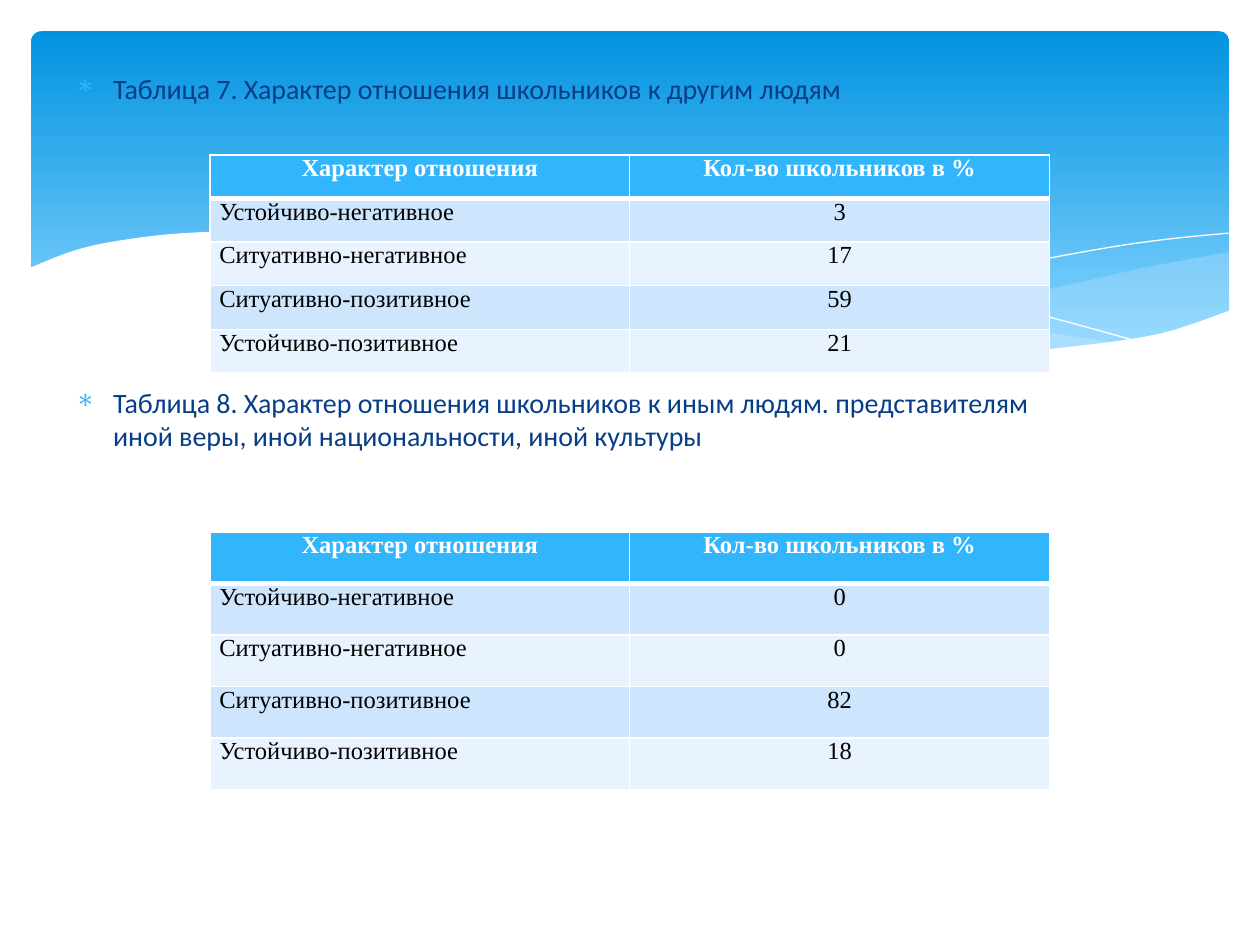
"""Build a slide with two captioned tables over a waved banner."""
from dataclasses import dataclass

from lxml.etree import SubElement as Sub, Element as Elem
from pptx import Presentation as Deck
from pptx.dml.color import RGBColor as Rgb
from pptx.enum.shapes import MSO_SHAPE as Kind
from pptx.enum.text import MSO_ANCHOR as Anchor, PP_ALIGN as Align
from pptx.oxml.ns import qn
from pptx.util import Cm, Pt


@dataclass(frozen=True)
class Theme:
    deep: str = "0293E0"
    sky: str = "83D3FE"
    mist: str = "C6E7FC"
    white: str = "FFFFFF"
    black: str = "000000"
    navy: str = "073E87"
    head: str = "31B6FD"
    bands: tuple = ("CEE5FE", "E8F3FF")
    sans: str = "Calibri"
    serif: str = "Times New Roman"
    title: int = 16
    cell: int = 14
    thin: int = 1
    thick: int = 3


THEME = Theme()

CREST = [(24.82, 6.25), (23.37, 6.73), (21.59, 6.99), (20.55, 7.04),
         (18.44, 6.91), (15.9, 6.55), (13.44, 6.07), (11.35, 5.59),
         (9.27, 5.13), (7.42, 4.83), (5.36, 4.67), (3.71, 4.7),
         (2.41, 4.85), (1.5, 5.05), (0.58, 5.41)]
BASE = [(0.58, 8.36), (24.82, 8.36)]
RIGHT_TOP = [(24.79, 5.08), (23.01, 5.41), (21.13, 5.84), (19.13, 6.3),
             (16.79, 6.73)]
RIGHT_LOW = [(16.79, 6.73), (18.59, 6.96), (20.4, 7.06), (22.15, 6.96),
             (23.57, 6.68), (24.79, 6.27)]
LEFT_TOP = [(22.68, 6.93), (20.5, 6.6), (17.93, 6.1), (15.98, 5.64),
            (13.74, 5.16), (11.81, 4.85), (9.65, 4.7), (7.26, 4.85)]
LEFT_LOW = [(7.26, 4.85), (9.19, 5.16), (11.4, 5.64), (14.38, 6.3),
            (16.89, 6.76), (19, 7.01), (20.78, 7.06), (22.68, 6.93)]
LONG_LINE = [(7.85, 4.95), (9.22, 4.8), (11, 4.75), (13.54, 4.93),
             (16.15, 5.28), (19.3, 5.92), (21.11, 6.38), (23.04, 6.91)]
SHORT_LINE = [(15.57, 6.53), (17.65, 5.97), (19.71, 5.49), (22, 5.05),
              (23.47, 4.83), (24.77, 4.7)]

HEADS = ("Характер отношения", "Кол-во школьников в %")
LABELS = ("Устойчиво-негативное", "Ситуативно-негативное",
          "Ситуативно-позитивное", "Устойчиво-позитивное")
NOTES = (
    ("Таблица 7. Характер отношения школьников к другим людям", 0),
    ("Таблица 8. Характер отношения школьников к иным людям. "
     "представителям иной веры, иной национальности, иной культуры", 160),
)


def color(name):
    return Rgb.from_string(name)


def bend(knots, steps=5):
    ends = [knots[0], *knots, knots[-1]]
    points = [knots[0]]
    for a, b, c, d in zip(ends, ends[1:], ends[2:], ends[3:]):
        for step in range(1, steps + 1):
            t = step / steps
            points.append(tuple(
                (2 * q + (r - p) * t + (2 * p - 5 * q + 4 * r - s) * t ** 2
                 + (3 * q - p - 3 * r + s) * t ** 3) / 2
                for p, q, r, s in zip(a, b, c, d)))
    return points


def add_path(slide, points, close):
    first, *rest = [(Cm(x), Cm(y)) for x, y in points]
    pen = slide.shapes.build_freeform(*first)
    pen.add_line_segments(rest, close=close)
    shape = pen.convert_to_shape()
    shape.shadow.inherit = False
    return shape


def add_wave(slide, points, fill, alpha=100):
    shape = add_path(slide, points, True)
    shape.fill.solid()
    shape.fill.fore_color.rgb = color(fill)
    shape.line.fill.background()
    if alpha < 100:
        tint = next(shape.fill._xPr.iter(qn("a:srgbClr")))
        Sub(tint, qn("a:alpha"), val=str(alpha * 1000))


def add_curve(slide, knots):
    shape = add_path(slide, bend(knots), False)
    shape.fill.background()
    shape.line.color.rgb = color(THEME.white)
    shape.line.width = Pt(0)


def add_banner(slide):
    shape = slide.shapes.add_shape(
        Kind.ROUNDED_RECTANGLE, Cm(0.63), Cm(0.63), Cm(24.15), Cm(6.86))
    shape.adjustments[0] = 0.03
    shape.shadow.inherit = False
    shape.line.fill.background()
    shape.fill.gradient()
    shape.fill.gradient_angle = 270
    stops = zip(shape.fill.gradient_stops,
                ((0, THEME.deep), (0.9, THEME.sky)))
    for stop, (place, tone) in stops:
        stop.position = place
        stop.color.rgb = color(tone)


def set_font(para, face, size, tone, bold=False):
    font = para.font
    font.name, font.size, font.bold = face, Pt(size), bold
    font.color.rgb = color(tone)


def add_notes(slide):
    box = slide.shapes.add_textbox(Cm(1.27), Cm(1.32), Cm(20.75), Cm(16.66))
    frame = box.text_frame
    frame.word_wrap = True
    for i, (text, gap) in enumerate(NOTES):
        para = frame.add_paragraph() if i else frame.paragraphs[0]
        para.text = text
        para.space_before = Pt(gap)
        set_font(para, THEME.sans, THEME.title, THEME.navy)
        props = para._p.get_or_add_pPr()
        props.set("marL", str(Cm(0.76)))
        props.set("indent", str(-Cm(0.76)))
        dot = Elem(qn("a:buClr"))
        Sub(dot, qn("a:srgbClr"), val=THEME.head)
        mark = Elem(qn("a:buChar"), char="∗")
        spot = props.index(props.find(qn("a:spcBef"))) + 1
        props[spot:spot] = [dot, mark]


def set_edge(cell, row):
    props = cell._tc.get_or_add_tcPr()
    thick = {0: "B", 1: "T"}.get(row)
    for i, side in enumerate("LRTB"):
        width = THEME.thick if side == thick else THEME.thin
        edge = Elem(qn("a:ln" + side), w=str(Pt(width)))
        fill = Sub(edge, qn("a:solidFill"))
        Sub(fill, qn("a:srgbClr"), val=THEME.white)
        props.insert(i, edge)


def fill_cell(cell, text, row, col):
    head = row == 0
    cell.margin_left = cell.margin_right = Cm(0.19)
    cell.margin_top = cell.margin_bottom = 0
    cell.vertical_anchor = Anchor.TOP
    cell.fill.solid()
    cell.fill.fore_color.rgb = color(
        THEME.head if head else THEME.bands[(row - 1) % 2])
    para = cell.text_frame.paragraphs[0]
    para.text = text
    para.alignment = Align.CENTER if head or col else Align.LEFT
    set_font(para, THEME.serif, THEME.cell,
             THEME.white if head else THEME.black, head)
    set_edge(cell, row)


def add_grid(slide, top, high, counts):
    rows = [HEADS, *zip(LABELS, map(str, counts))]
    grid = slide.shapes.add_table(
        len(rows), len(HEADS), Cm(4.23), Cm(top), Cm(16.93),
        Cm(high * len(rows))).table
    for r, texts in enumerate(rows):
        grid.rows[r].height = Cm(high)
        for c, text in enumerate(texts):
            fill_cell(grid.cell(r, c), text, r, c)


def main():
    deck = Deck()
    deck.slide_width, deck.slide_height = Cm(25.4), Cm(19.05)
    slide = deck.slides.add_slide(deck.slide_layouts[6])
    add_banner(slide)
    add_wave(slide, bend(RIGHT_TOP) + bend(RIGHT_LOW), THEME.mist, 29)
    add_wave(slide, bend(LEFT_TOP) + bend(LEFT_LOW), THEME.mist, 40)
    add_curve(slide, LONG_LINE)
    add_curve(slide, SHORT_LINE)
    add_wave(slide, bend(CREST) + BASE, THEME.white)
    add_notes(slide)
    add_grid(slide, 3.12, 0.88, (3, 17, 59, 21))
    add_grid(slide, 10.72, 1.04, (0, 0, 82, 18))
    deck.save("out.pptx")


if __name__ == "__main__":
    main()
